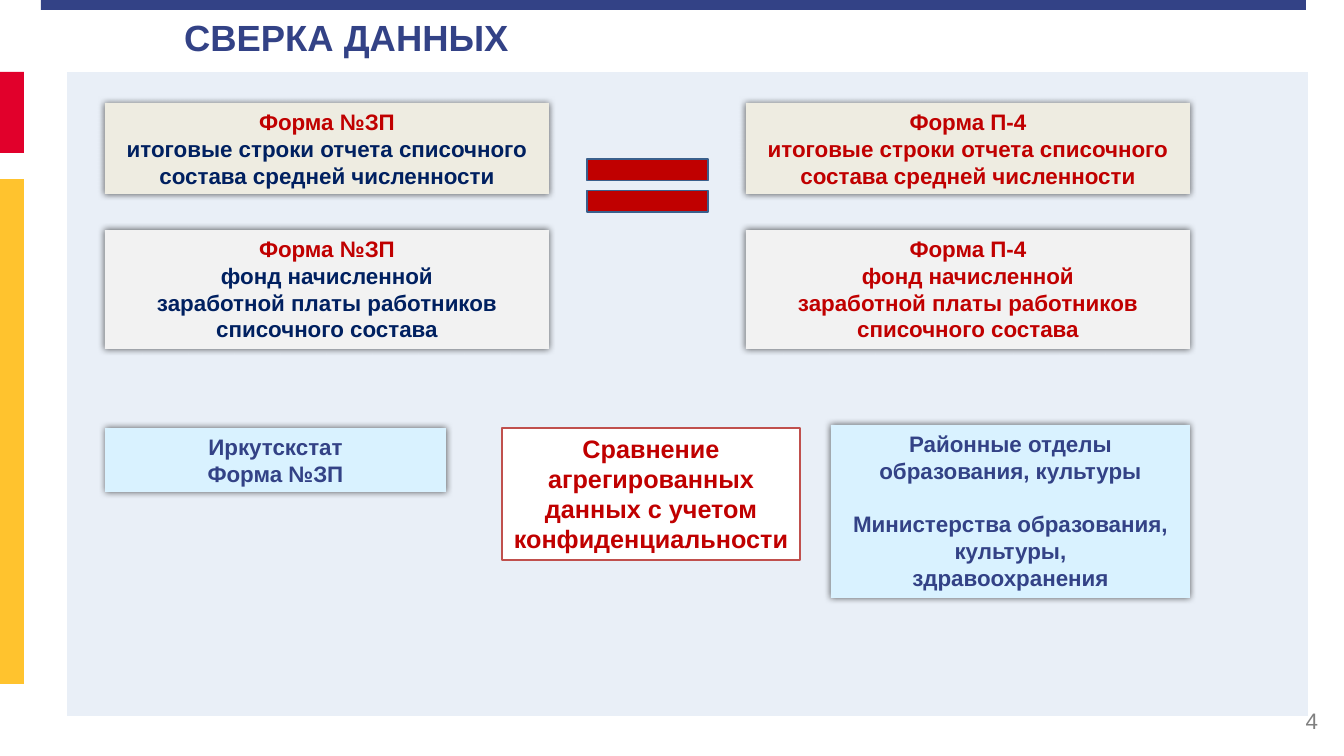
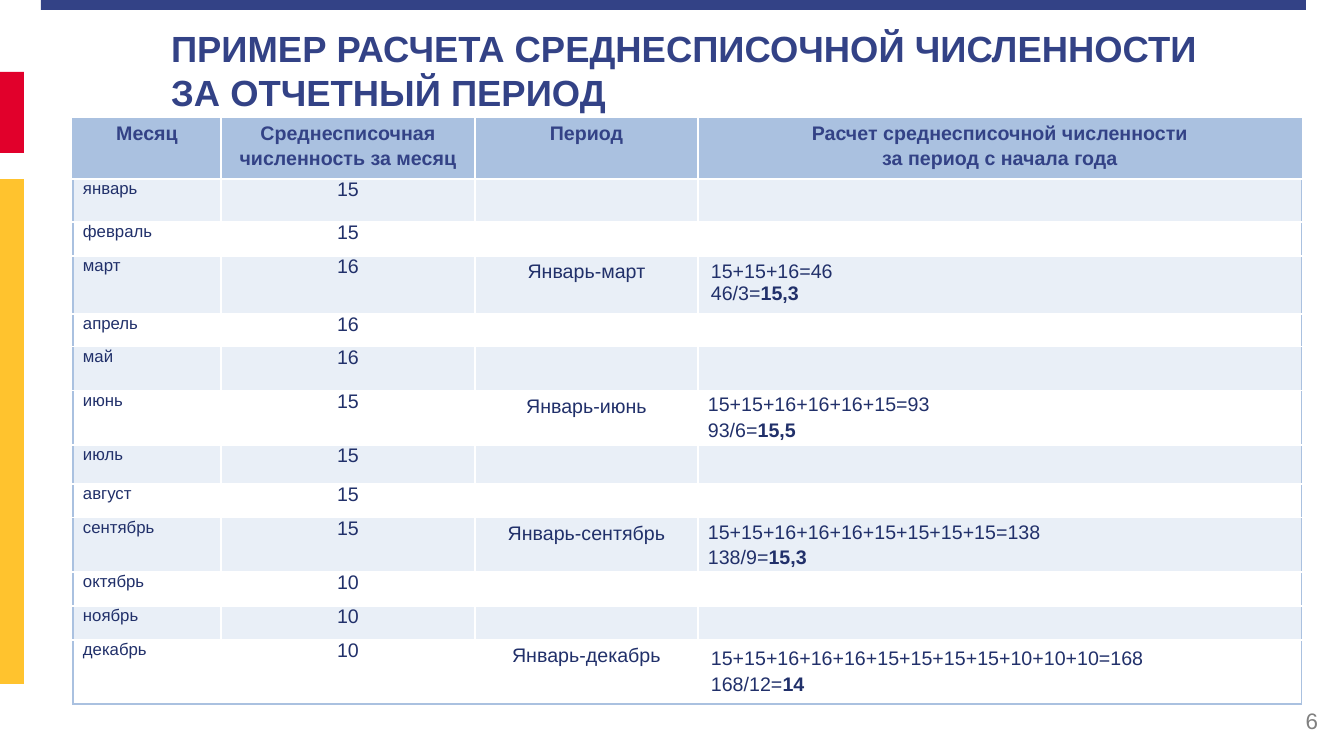
from lxml import etree
from pptx import Presentation
from pptx import util as u
from pptx.dml.color import RGBColor
from pptx.enum import shapes, text
from pptx.oxml import ns

PX = 914400 / 100.8
FONT = "Arial"
BLUE = RGBColor(0x33, 0x42, 0x86)
NAVY = RGBColor(0x00, 0x20, 0x60)
INK = RGBColor(0x21, 0x30, 0x6A)
RED = RGBColor(0xC0, 0x00, 0x00)
FLAG_RED = RGBColor(0xE1, 0x00, 0x2B)
YELLOW = RGBColor(0xFF, 0xC3, 0x2E)
WHITE = RGBColor(0xFF, 0xFF, 0xFF)
PALE = RGBColor(0xE9, 0xEF, 0xF7)
HEADER = RGBColor(0xAA, 0xC1, 0xE0)
BEIGE = RGBColor(0xEE, 0xEC, 0xE1)
LIGHT_GRAY = RGBColor(0xF2, 0xF2, 0xF2)
SKY = RGBColor(0xD9, 0xF2, 0xFF)
GRAY = RGBColor(0x80, 0x80, 0x80)
BRICK = RGBColor(0xC0, 0x50, 0x4D)
STEEL = RGBColor(0x3A, 0x5F, 0x8C)
LEFT, CENTER, RIGHT, JUSTIFY = (
    text.PP_ALIGN.LEFT, text.PP_ALIGN.CENTER, text.PP_ALIGN.RIGHT, text.PP_ALIGN.JUSTIFY)


def format_text(text_frame, size, color, bold=False, alignment=LEFT, spacing=1.0):
    for paragraph in text_frame.paragraphs:
        paragraph.alignment = alignment
        paragraph.line_spacing = spacing
        for run in paragraph.runs:
            run.font.name = FONT
            run.font.size = u.Pt(size)
            run.font.bold = bold
            run.font.color.rgb = color


def add_box(slide, place, fill, line=None, kind=shapes.MSO_SHAPE.RECTANGLE):
    shape = slide.shapes.add_shape(kind, *[round(n * PX) for n in place])
    shape.shadow.inherit = False
    shape.fill.solid()
    shape.fill.fore_color.rgb = fill
    if line is None:
        shape.line.fill.background()
    else:
        shape.line.color.rgb = line
        shape.line.width = u.Pt(1)
    shape.text_frame.word_wrap = True
    shape.text_frame.vertical_anchor = text.MSO_ANCHOR.TOP
    return shape


presentation = Presentation()
presentation.slide_width = round(1344 * PX)
presentation.slide_height = round(756 * PX)
layout = presentation.slide_layouts[5]

slides = []
for title_text, title_place, number in [
    ("СВЕРКА ДАННЫХ", (174, 10, 380, 54), "4"),
    ("ПРИМЕР РАСЧЕТА СРЕДНЕСПИСОЧНОЙ ЧИСЛЕННОСТИ\nЗА ОТЧЕТНЫЙ ПЕРИОД", (161, 21, 1167, 99), "6"),
]:
    slide = presentation.slides.add_slide(layout)
    slides.append(slide)
    title = slide.shapes.title
    title.left, title.top, title.width, title.height = [round(n * PX) for n in title_place]
    title.text_frame.text = title_text
    title.text_frame.word_wrap = True
    title.text_frame.auto_size = text.MSO_AUTO_SIZE.NONE
    title.text_frame.vertical_anchor = text.MSO_ANCHOR.TOP
    format_text(title.text_frame, 26, BLUE, True)

    page = slide.shapes.add_textbox(*[round(n * PX) for n in (1026, 701, 302, 40)])
    page.text_frame.text = number
    page.text_frame.word_wrap = True
    page.text_frame.vertical_anchor = text.MSO_ANCHOR.MIDDLE
    format_text(page.text_frame, 16, GRAY, alignment=RIGHT)

comparison, example = slides

for index, (place, fill) in enumerate([
    ((41, 0, 1265, 10), BLUE),
    ((0, 72, 24, 81), FLAG_RED),
    ((0, 179, 24, 505), YELLOW),
]):
    band = add_box(comparison, place, fill)
    band.element.xpath(".//p:cNvPr")[0].set("id", str(20 + index))
    layout.shapes.element.append(band.element)

add_box(comparison, (66, 71, 1243, 646), PALE, WHITE)

HEADCOUNT = ["итоговые строки отчета списочного состава средней численности"]
PAYROLL = ["фонд начисленной", "заработной платы работников списочного состава"]
cards = []
for left, form, detail_color in [(105, "Форма №ЗП", NAVY), (746, "Форма П-4", RED)]:
    for top, height, fill, details in [(103, 91, BEIGE, HEADCOUNT), (230, 119, LIGHT_GRAY, PAYROLL)]:
        cards.append(((left, top, 444, height), fill, RED, detail_color, [form, *details]))
cards.append(((105, 428, 341, 64), SKY, BLUE, BLUE, ["Иркутскстат", "Форма №ЗП"]))
cards.append(((831, 425, 359, 173), SKY, BLUE, BLUE, [
    "Районные отделы", "образования, культуры",
    "Министерства образования, культуры,", "здравоохранения"]))

for place, fill, heading_color, detail_color, lines in cards:
    card = add_box(comparison, place, fill)
    effects = card.element.spPr.find(ns.qn("a:effectLst"))
    shadow = etree.SubElement(effects, ns.qn("a:outerShdw"), blurRad="63500", dist="0", dir="0")
    shadow_color = etree.SubElement(shadow, ns.qn("a:srgbClr"), val="000000")
    etree.SubElement(shadow_color, ns.qn("a:alpha"), val="60000")
    card.text_frame.text = "\n".join(lines)
    format_text(card.text_frame, 16, detail_color, True, CENTER)
    card.text_frame.paragraphs[0].runs[0].font.color.rgb = heading_color
    for paragraph in card.text_frame.paragraphs:
        if paragraph.text.startswith("Министерства"):
            paragraph.space_before = u.Pt(19)

summary = add_box(comparison, (502, 428, 298, 132), WHITE, BRICK)
summary.text_frame.text = "Сравнение агрегированных данных с учетом конфиденциальности"
format_text(summary.text_frame, 18, RED, True, CENTER)

equals = add_box(comparison, (565, 140, 165, 91), RED, STEEL, shapes.MSO_SHAPE.MATH_EQUAL)
equals.adjustments[0] = 0.235
equals.adjustments[1] = 0.115

HEADINGS = ["Месяц", "Среднесписочная численность за месяц", "Период",
            "Расчет среднесписочной численности\nза период с начала года"]
MONTHS = [
    ("январь", 15), ("февраль", 15), ("март", 16), ("апрель", 16), ("май", 16), ("июнь", 15),
    ("июль", 15), ("август", 15), ("сентябрь", 15), ("октябрь", 10), ("ноябрь", 10), ("декабрь", 10),
]
RESULTS = {3: "15,3", 6: "15,5", 9: "15,3", 12: "14"}
PADDED_RESULTS = (3, 12)
COLUMN_WIDTHS = [148, 254, 223, 604]
ROW_HEIGHTS = [60, 43, 34, 58, 33, 44, 54, 39, 34, 54, 34, 34, 64]

rows = [HEADINGS]
for month, (name, count) in enumerate(MONTHS, 1):
    period = calculation = ""
    if month in RESULTS:
        counts = [value for _, value in MONTHS[:month]]
        period = f"Январь-{name}"
        calculation = f"{'+'.join(map(str, counts))}={sum(counts)}\n{sum(counts)}/{month}="
    rows.append([name, str(count), period, calculation])

frame = example.shapes.add_table(
    len(rows), len(HEADINGS),
    *[round(n * PX) for n in (73, 119, sum(COLUMN_WIDTHS), sum(ROW_HEIGHTS))])
table = frame.table
for column, width in zip(table.columns, COLUMN_WIDTHS):
    column.width = round(width * PX)
for row, height in zip(table.rows, ROW_HEIGHTS):
    row.height = round(height * PX)

last_row, last_column = len(rows) - 1, len(HEADINGS) - 1
for r, values in enumerate(rows):
    for c, value in enumerate(values):
        cell = table.cell(r, c)
        padded = r > 0 and (c == 2 or c == 3 and r in PADDED_RESULTS)
        cell.margin_left = cell.margin_right = round((13 if padded else 10) * PX)
        cell.margin_top = cell.margin_bottom = round((5 if padded and value else 0) * PX)
        for side, outer in [("L", c == 0), ("R", c == last_column), ("T", r == 0), ("B", r == last_row)]:
            border = etree.SubElement(
                cell._tc.get_or_add_tcPr(), ns.qn(f"a:ln{side}"), w=str(u.Pt(1)))
            border_fill = etree.SubElement(border, ns.qn("a:solidFill"))
            etree.SubElement(border_fill, ns.qn("a:srgbClr"), val=str(HEADER if outer else WHITE))
        cell.fill.solid()
        cell.fill.fore_color.rgb = HEADER if r == 0 else PALE if r % 2 else WHITE
        cell.text_frame.text = value
        if r == 0:
            format_text(cell.text_frame, 14, BLUE, True, CENTER, 1.15)
            continue
        if c == 3 and value:
            cell.text_frame.paragraphs[-1].add_run().text = RESULTS[r]
        spacing = 1.15 if c == 3 and r != 3 else 1.0
        format_text(cell.text_frame, 12 if c == 0 else 14, INK, False,
                    [JUSTIFY, CENTER, CENTER, LEFT][c], spacing)
        if c == 3 and value:
            cell.text_frame.paragraphs[-1].runs[-1].font.bold = True

presentation.save("out.pptx")
